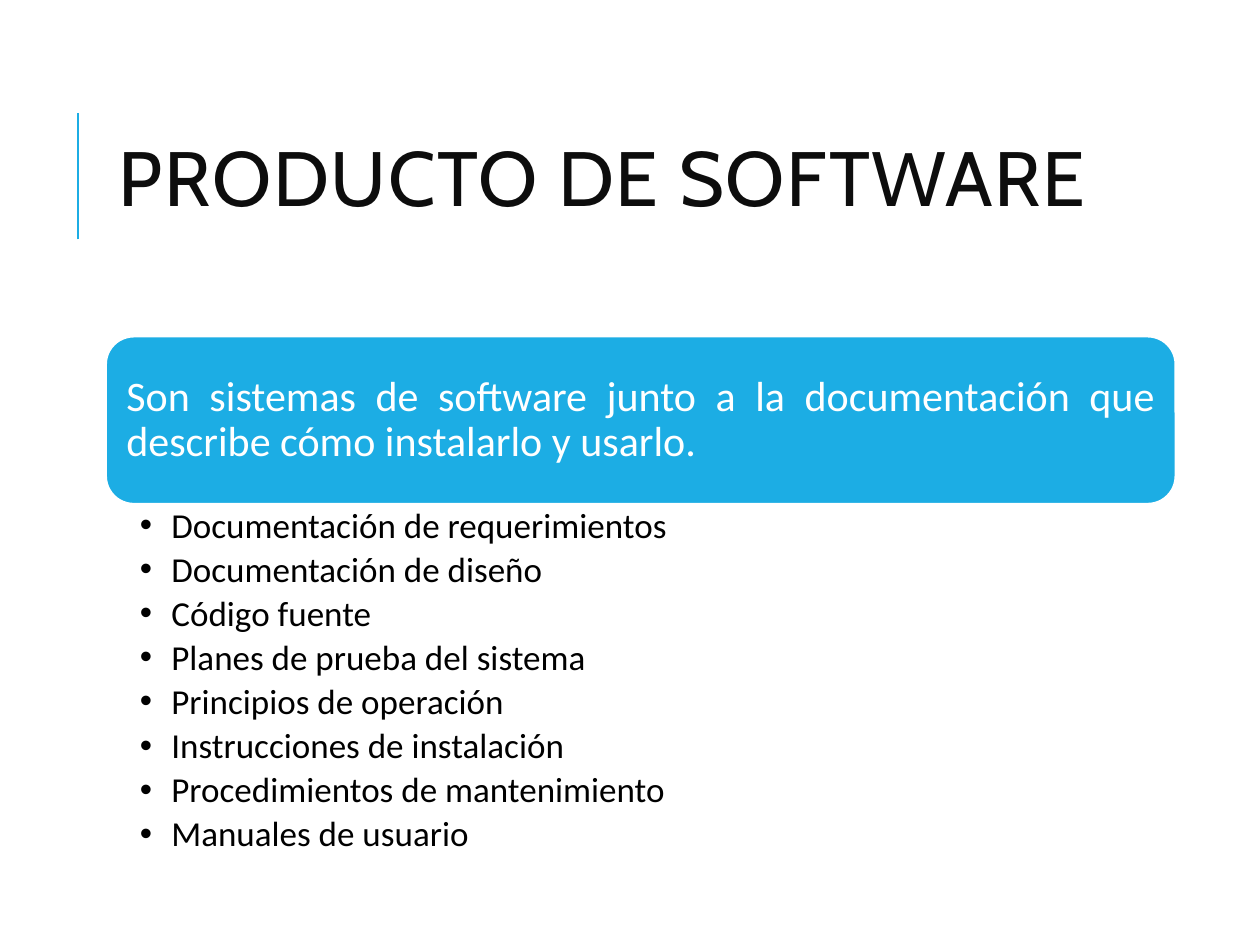
"""Builds the slide on software products, with its heading card and bullet list."""
from lxml import etree
from pptx import Presentation
from pptx.dml.color import RGBColor
from pptx.enum.shapes import MSO_CONNECTOR, MSO_SHAPE
from pptx.enum.text import MSO_ANCHOR, MSO_AUTO_SIZE, PP_ALIGN
from pptx.oxml.ns import qn
from pptx.util import Inches, Pt

LINE = MSO_CONNECTOR.STRAIGHT
ROUND = MSO_SHAPE.ROUNDED_RECTANGLE
TOP, MIDDLE = MSO_ANCHOR.TOP, MSO_ANCHOR.MIDDLE
FIXED = MSO_AUTO_SIZE.NONE
LEFT, JUSTIFY = PP_ALIGN.LEFT, PP_ALIGN.JUSTIFY

COLORS = {"accent": "1CADE4", "title": "0D0D0D", "body": "000000", "paper": "FFFFFF"}
COLS, ROWS = 100, 75

ITEMS = [
    "Documentación de requerimientos",
    "Documentación de diseño",
    "Código fuente",
    "Planes de prueba del sistema",
    "Principios de operación",
    "Instrucciones de instalación",
    "Procedimientos de mantenimiento",
    "Manuales de usuario",
]


def tint(name):
    """Return the named colour."""
    return RGBColor.from_string(COLORS[name])


def apply(target, values):
    """Set attributes from a dict of format values."""
    for name, value in values.items():
        setattr(target, name, value)


class Page:
    """Holds the style and the current slide."""

    def __init__(self, deck):
        """Add a title-only slide and work out its grid cell."""
        self.slide = deck.slides.add_slide(deck.slide_layouts[5])
        self.shapes = self.slide.shapes
        self.cell = deck.slide_width / COLS, deck.slide_height / ROWS

    def span(self, *units):
        """Turn column and row counts into lengths."""
        return [round(unit * self.cell[i % 2]) for i, unit in enumerate(units)]

    def label(self, shape, lines, font, color, para, insets=(0.1, 0.05), anchor=MIDDLE):
        """Fill a shape with formatted paragraphs."""
        frame = shape.text_frame
        side, edge = map(Inches, insets)
        apply(frame, {"word_wrap": True, "auto_size": FIXED, "vertical_anchor": anchor,
                      "margin_left": side, "margin_right": side,
                      "margin_top": edge, "margin_bottom": edge})
        frame.text = "\n".join(lines)
        for item in frame.paragraphs:
            apply(item, para)
            run = item.runs[0]
            apply(run.font, font)
            run.font.color.rgb = tint(color)
        return frame

    def title(self, text, box):
        """Place and format the title."""
        shape = self.shapes.title
        apply(shape, dict(zip(("left", "top", "width", "height"), self.span(*box))))
        frame = self.label(shape, [text], {"name": "Cabin", "size": Pt(44)}, "title",
                           {"alignment": LEFT, "line_spacing": 0.8})
        frame.paragraphs[0].runs[0]._r.get_or_add_rPr().set("spc", "100")

    def rule(self, ends):
        """Draw a straight accent line."""
        line = self.shapes.add_connector(LINE, *self.span(*ends))
        line.line.color.rgb = tint("accent")
        line.line.width = Pt(1.5)
        etree.SubElement(line._element.spPr, qn("a:effectLst"))

    def card(self, text, box):
        """Draw a rounded card with text."""
        shape = self.shapes.add_shape(ROUND, *self.span(*box))
        shape.shadow.inherit = False
        shape.fill.solid()
        shape.fill.fore_color.rgb = tint("accent")
        shape.line.color.rgb = tint("paper")
        shape.line.width = Pt(1.25)
        self.label(shape, [text], {"name": "Calibri", "size": Pt(24)}, "paper",
                   {"alignment": JUSTIFY, "line_spacing": 0.9}, (0.1, 0.1))

    def bullets(self, lines, box):
        """Add a bulleted list."""
        shape = self.shapes.add_textbox(*self.span(*box))
        frame = self.label(shape, lines, {"name": "Calibri", "size": Pt(20)}, "body",
                           {"alignment": JUSTIFY, "line_spacing": 0.9, "level": 1,
                            "space_after": Pt(3.6)}, (0.27, 0.03), TOP)
        hang = Inches(0.25)
        for item in frame.paragraphs:
            props = item._p.get_or_add_pPr()
            props.set("marL", str(hang))
            props.set("indent", str(-hang))
            etree.SubElement(props, qn("a:buFont")).set("typeface", "Arial")
            etree.SubElement(props, qn("a:buChar")).set("char", "•")


def main():
    """Build and save the deck."""
    deck = Presentation()
    deck.slide_width, deck.slide_height = Inches(10), Inches(7.5)
    page = Page(deck)
    left, wide, top, high = 8.4, 84.9, 26.7, 13.3
    page.rule((6.2, 19, 6.2, 9))
    page.title("PRODUCTO DE SOFTWARE", (left, 6.4, 79.7, 16.4))
    page.card("Son sistemas de software junto a la documentación que describe "
              "cómo instalarlo y usarlo.", (left, top, wide, high))
    page.bullets(ITEMS, (left, top + high, wide, 27.2))
    deck.save("out.pptx")


if __name__ == "__main__":
    main()
